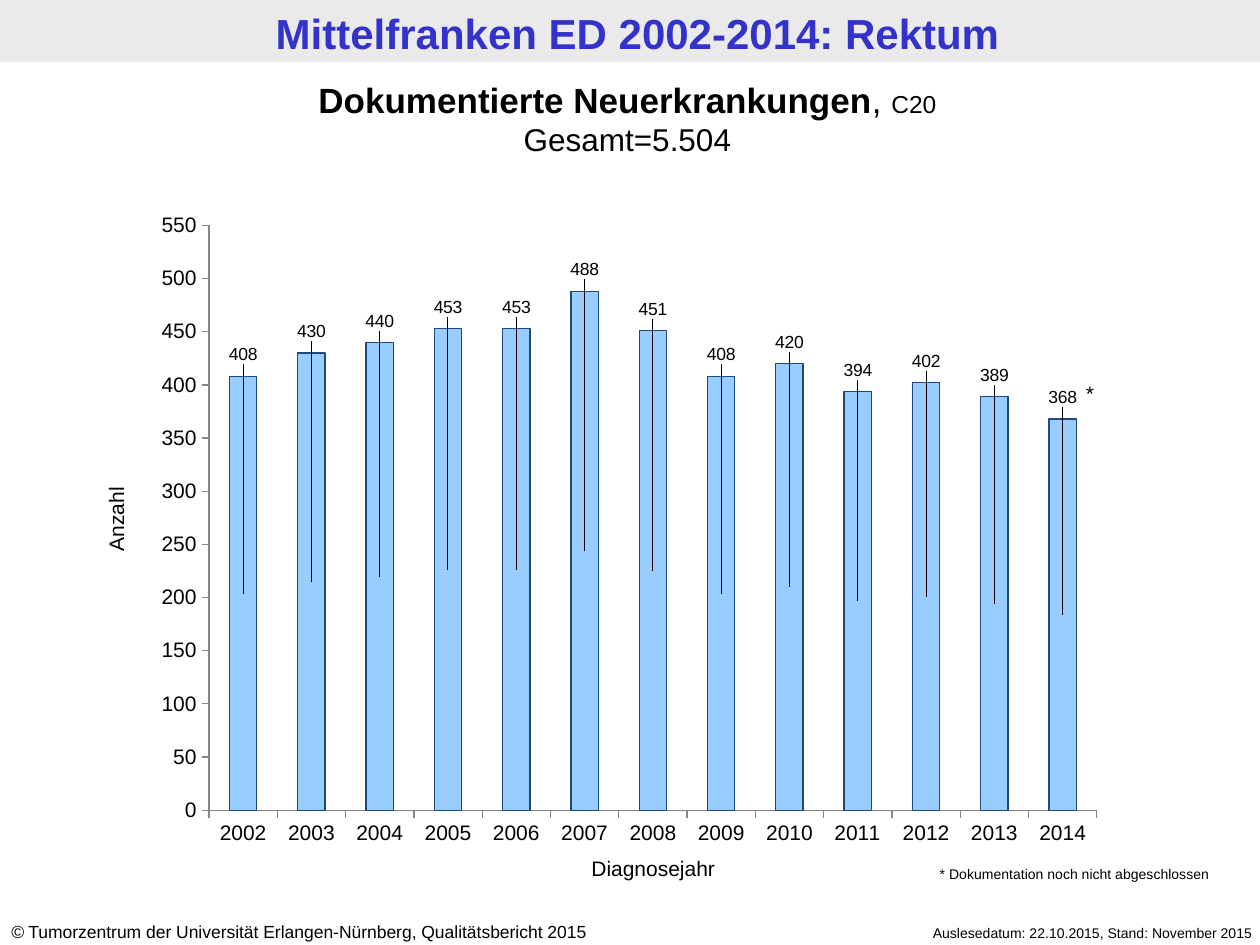
import pptx
import pptx.chart.data
import pptx.dml.color
import pptx.enum.chart
import pptx.enum.shapes
import pptx.enum.text
import pptx.oxml
import pptx.oxml.ns
import pptx.util
from pptx.util import Inches

RGBColor = pptx.dml.color.RGBColor
BLACK = RGBColor(0x00, 0x00, 0x00)
BAND_GREY = RGBColor(0xEA, 0xEA, 0xEA)
TITLE_BLUE = RGBColor(0x33, 0x33, 0xCC)
BAR_BLUE = RGBColor(0x99, 0xCC, 0xFF)
BAR_EDGE = RGBColor(0x1F, 0x49, 0x7D)
AXIS_GREY = RGBColor(0x86, 0x86, 0x86)

LEFT = pptx.enum.text.PP_ALIGN.LEFT
CENTER = pptx.enum.text.PP_ALIGN.CENTER
RIGHT = pptx.enum.text.PP_ALIGN.RIGHT

CASES = {2002: 408, 2003: 430, 2004: 440, 2005: 453, 2006: 453, 2007: 488, 2008: 451,
         2009: 408, 2010: 420, 2011: 394, 2012: 402, 2013: 389, 2014: 368}
AXIS_MAX = 550
PLOT_X, PLOT_Y, PLOT_W, PLOT_H = 0.066, 0.029, 0.914, 0.903
LABEL_GAP = 0.033  # bar top to label centre, as a share of the chart height


def layout_xml(x, y, w=None, h=None):
    """Manual layout: the inner plot area with a size, else a label offset."""
    if w is None:
        body = f'<c:x val="{x}"/><c:y val="{y:.3f}"/>'
    else:
        body = ('<c:layoutTarget val="inner"/><c:xMode val="edge"/><c:yMode val="edge"/>'
                f'<c:x val="{x}"/><c:y val="{y}"/><c:w val="{w}"/><c:h val="{h}"/>')
    return pptx.oxml.parse_xml(
        f'<c:layout {pptx.oxml.ns.nsdecls("c")}><c:manualLayout>{body}'
        '</c:manualLayout></c:layout>')


class ReportSlide:
    font_name = "Arial"

    def __init__(self, slide):
        self.slide = slide

    def band(self, left, top, width, height, color):
        band = self.slide.shapes.add_shape(
            pptx.enum.shapes.MSO_SHAPE.RECTANGLE,
            Inches(left), Inches(top), Inches(width), Inches(height))
        band.shadow.inherit = False
        band.fill.solid()
        band.fill.fore_color.rgb = color
        band.line.fill.background()

    def style(self, font, size, color=BLACK):
        font.name = self.font_name
        font.size = pptx.util.Pt(size)
        font.color.rgb = color

    def text(self, box, lines, align=LEFT, color=BLACK, rotation=0):
        """Each line is a list of (text, size, bold, italic); the last two are optional."""
        holder = self.slide.shapes.add_textbox(*(Inches(v) for v in box))
        holder.rotation = rotation
        frame = holder.text_frame
        frame.word_wrap = True
        frame.auto_size = pptx.enum.text.MSO_AUTO_SIZE.SHAPE_TO_FIT_TEXT
        for number, line in enumerate(lines):
            paragraph = frame.add_paragraph() if number else frame.paragraphs[0]
            paragraph.alignment = align
            for content, size, *emphasis in line:
                run = paragraph.add_run()
                run.text = content
                self.style(run.font, size, color)
                run.font.bold = "bold" in emphasis
                run.font.italic = "italic" in emphasis

    def column_chart(self, box, cases):
        data = pptx.chart.data.CategoryChartData()
        data.categories = [str(year) for year in cases]
        data.add_series("Series 1", list(cases.values()))
        chart = self.slide.shapes.add_chart(
            pptx.enum.chart.XL_CHART_TYPE.COLUMN_STACKED,
            *(Inches(v) for v in box), data).chart
        chart.has_legend = False
        chart.has_title = False
        self.style(chart.font, 12)

        # Plot area
        plot_area = chart._chartSpace.chart.plotArea
        for automatic in plot_area.findall(pptx.oxml.ns.qn("c:layout")):
            plot_area.remove(automatic)
        plot_area.insert(0, layout_xml(PLOT_X, PLOT_Y, PLOT_W, PLOT_H))

        # Axes
        for axis in (chart.category_axis, chart.value_axis):
            axis.has_major_gridlines = False
            axis.major_tick_mark = pptx.enum.chart.XL_TICK_MARK.OUTSIDE
            axis.minor_tick_mark = pptx.enum.chart.XL_TICK_MARK.NONE
            axis.format.line.color.rgb = AXIS_GREY
        chart.value_axis.minimum_scale = 0
        chart.value_axis.maximum_scale = AXIS_MAX
        chart.value_axis.major_unit = 50

        # Columns
        plot = chart.plots[0]
        plot.gap_width = 150
        plot.overlap = 100
        plot.vary_by_categories = False
        columns = plot.series[0]
        columns.format.fill.solid()
        columns.format.fill.fore_color.rgb = BAR_BLUE
        columns.format.line.color.rgb = BAR_EDGE
        columns.format.line.width = pptx.util.Pt(0.75)

        # Values, lifted from the middle of each column to above its top
        labels = columns.data_labels
        labels.show_value = True
        self.style(labels.font, 10)
        for index, count in enumerate(cases.values()):
            label = columns.points[index].data_label
            self.style(label.font, 10)
            label.position = pptx.enum.chart.XL_LABEL_POSITION.CENTER
            lift = PLOT_H * count / AXIS_MAX / 2 + LABEL_GAP
            labels._element.dLbl_lst[index].insert(1, layout_xml(0, -lift))


def main():
    deck = pptx.Presentation()
    deck.slide_width, deck.slide_height = Inches(10), Inches(7.5)
    report = ReportSlide(deck.slides.add_slide(deck.slide_layouts[6]))

    # Header
    report.band(0, 0, 10, 0.49, BAND_GREY)
    report.text((0.06, 0.01, 10, 0.49),
                [[("Mittelfranken ED 2002-2014: Rektum", 24, "bold")]], CENTER, TITLE_BLUE)

    # Footer
    report.text((6.65, 7.29, 3.39, 0.24),
                [[("Auslesedatum: 22.10.2015, Stand: November 2015", 8)]], RIGHT)
    report.text((-0.01, 7.26, 5.24, 0.27),
                [[("©", 10, "italic"),
                  (" Tumorzentrum der Universität Erlangen-Nürnberg, Qualitätsbericht 2015", 10)]])

    # Chart with its heading, axis titles and footnote
    report.column_chart((1.15, 1.64, 7.71, 5.14), CASES)
    report.text((-0.04, 0.57, 10.04, 0.74),
                [[("Dokumentierte Neuerkrankungen", 20, "bold"), (", ", 20), ("C20", 14)],
                 [("Gesamt=5.504", 18)]], CENTER)
    report.text((4.06, 6.74, 2.25, 0.3), [[("Diagnosejahr", 12)]], CENTER)
    report.text((0.31, 3.97, 1.22, 0.3), [[("Anzahl", 12)]], CENTER, rotation=270)
    report.text((8.39, 2.97, 0.39, 0.3), [[("*", 12)]], RIGHT)
    report.text((7.36, 6.82, 2.52, 0.24),
                [[("* Dokumentation noch nicht abgeschlossen", 8)]])

    deck.save("out.pptx")


if __name__ == "__main__":
    main()
